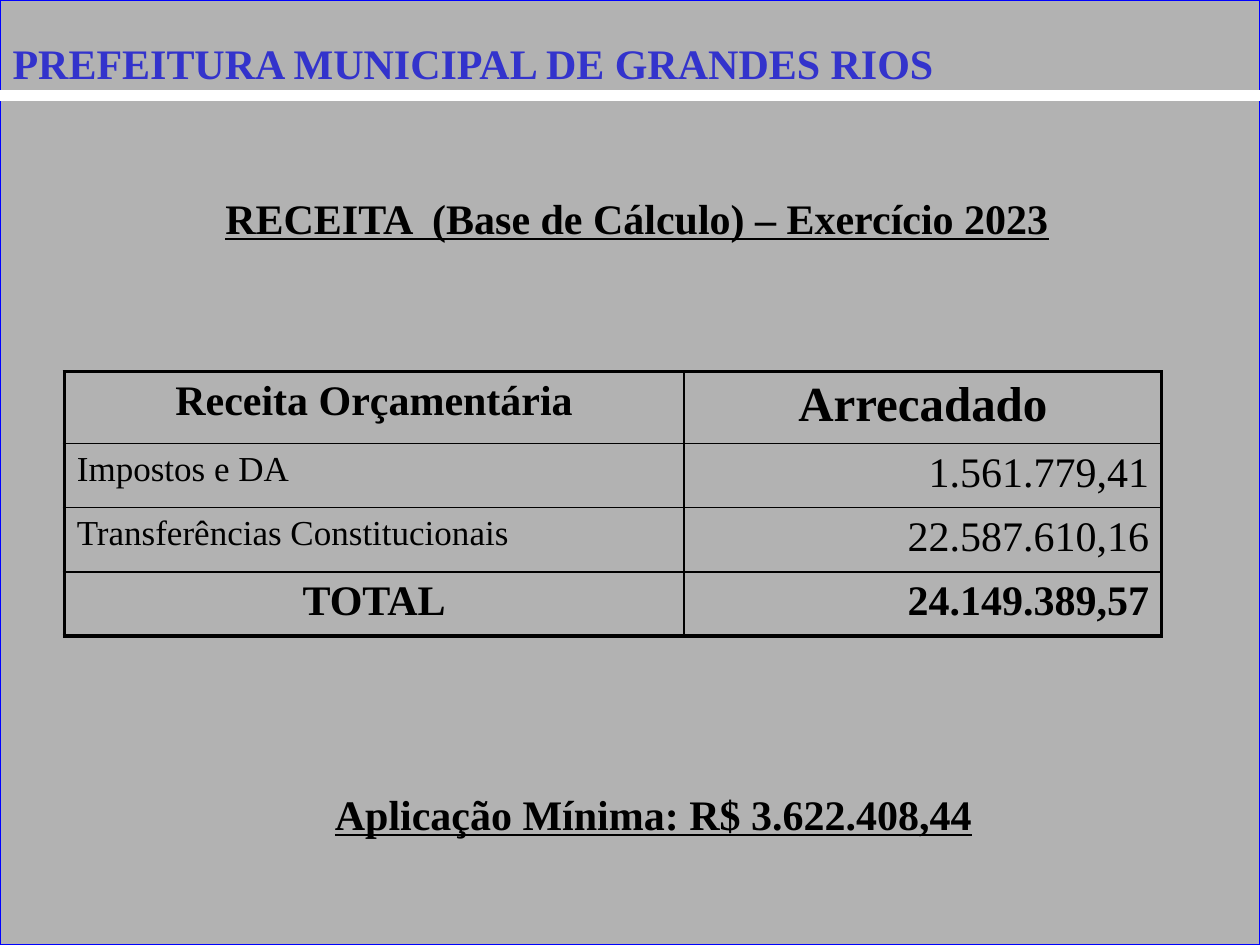
from lxml.etree import SubElement
from pptx import Presentation
from pptx.dml.color import RGBColor
from pptx.enum.shapes import MSO_CONNECTOR, MSO_SHAPE
from pptx.enum.text import MSO_ANCHOR, MSO_AUTO_SIZE, PP_ALIGN
from pptx.oxml import parse_xml
from pptx.oxml.ns import nsdecls, qn
from pptx.util import Inches, Pt

BLACK = RGBColor(0x00, 0x00, 0x00)
WHITE = RGBColor(0xFF, 0xFF, 0xFF)
GRAY = RGBColor(0xB2, 0xB2, 0xB2)
BLUE = RGBColor(0x00, 0x00, 0xFF)
INDIGO = RGBColor(0x33, 0x33, 0xCC)
FONT = "Times New Roman"
THIN, THICK = Pt(1), Pt(2.25)

TEXT_SHADOW = (
    f'<a:effectLst {nsdecls("a")}><a:outerShdw dist="35921" dir="2700000">'
    '<a:srgbClr val="808080"/></a:outerShdw></a:effectLst>'
)

REVENUE = [
    [("Receita Orçamentária", 24, True, PP_ALIGN.CENTER),
     ("Arrecadado", 28, True, PP_ALIGN.CENTER)],
    [("Impostos e DA", 20, False, PP_ALIGN.LEFT),
     ("1.561.779,41", 24, False, PP_ALIGN.RIGHT)],
    [("Transferências Constitucionais", 20, False, PP_ALIGN.LEFT),
     ("22.587.610,16", 24, False, PP_ALIGN.RIGHT)],
    [("TOTAL", 24, True, PP_ALIGN.CENTER),
     ("24.149.389,57", 24, True, PP_ALIGN.RIGHT)],
]


class RevenueSlide:
    def __init__(self, presentation):
        self.slide = presentation.slides.add_slide(presentation.slide_layouts[5])
        self.shapes = self.slide.shapes

    def styled_text(self, frame, text, size=24, bold=True, align=PP_ALIGN.CENTER,
                    color=BLACK, underline=None):
        frame.text = text
        paragraph = frame.paragraphs[0]
        paragraph.alignment = align
        run = paragraph.runs[0]
        run.font.name = FONT
        run.font.size = Pt(size)
        run.font.bold = bold
        run.font.underline = underline
        run.font.color.rgb = color
        return run

    def panel(self, left, top, width, height):
        panel = self.shapes.add_shape(
            MSO_SHAPE.RECTANGLE, Inches(left), Inches(top), Inches(width), Inches(height))
        panel.shadow.inherit = False
        panel.fill.solid()
        panel.fill.fore_color.rgb = GRAY
        panel.line.color.rgb = BLUE
        panel.line.width = Pt(0.75)

    def rule(self, top, width):
        rule = self.shapes.add_connector(
            MSO_CONNECTOR.STRAIGHT, 0, Inches(top), Inches(width), Inches(top))
        rule.line.color.rgb = WHITE
        rule.line.width = Pt(6)
        SubElement(rule._element.spPr, qn("a:effectLst"))

    def title(self, text, left, top, width, height):
        title = self.shapes.title
        title.left, title.top = Inches(left), Inches(top)
        title.width, title.height = Inches(width), Inches(height)
        title.text_frame.auto_size = MSO_AUTO_SIZE.NONE
        title.text_frame.vertical_anchor = MSO_ANCHOR.TOP
        run = self.styled_text(title.text_frame, text, align=PP_ALIGN.LEFT, color=INDIGO)
        fill = run._r.get_or_add_rPr().find(qn("a:solidFill"))
        fill.addnext(parse_xml(TEXT_SHADOW))
        self.shapes._spTree.append(title._element)

    def heading(self, text, left, top, width, height):
        heading = self.shapes.add_textbox(
            Inches(left), Inches(top), Inches(width), Inches(height))
        heading.text_frame.word_wrap = True
        self.styled_text(heading.text_frame, text, underline=True)

    def borders(self, cell, widths):
        properties = cell._tc.get_or_add_tcPr()
        for index, (side, width) in enumerate(widths.items()):
            properties.insert(index, parse_xml(
                f'<a:{side} {nsdecls("a")} w="{int(width)}"><a:solidFill>'
                f'<a:srgbClr val="{BLACK}"/></a:solidFill></a:{side}>'))

    def table(self, rows, left, top, column_widths, row_heights):
        table = self.shapes.add_table(
            len(rows), len(column_widths), Inches(left), Inches(top),
            Inches(sum(column_widths)), Inches(sum(row_heights))).table
        table.first_row = table.horz_banding = False
        for column, width in zip(table.columns, column_widths):
            column.width = Inches(width)
        for row, height in zip(table.rows, row_heights):
            row.height = Inches(height)
        last_row, last_column = len(rows) - 1, len(column_widths) - 1
        for r, row in enumerate(rows):
            for c, (text, size, bold, align) in enumerate(row):
                cell = table.cell(r, c)
                cell.fill.background()
                self.styled_text(cell.text_frame, text, size, bold, align)
                self.borders(cell, {
                    "lnL": THICK if c == 0 else THIN,
                    "lnR": THICK if c == last_column else THIN,
                    "lnT": THICK if r == 0 else THIN,
                    "lnB": THICK if r == last_row else THIN,
                })


def main():
    presentation = Presentation()
    presentation.slide_width, presentation.slide_height = Inches(10), Inches(7.5)
    revenue = RevenueSlide(presentation)
    revenue.panel(0, 0, 10, 7.5)
    revenue.rule(0.76, 10)
    revenue.heading("RECEITA  (Base de Cálculo) – Exercício 2023", 0.98, 1.48, 8.15, 0.5)
    revenue.table(REVENUE, 0.51, 2.95, [4.92, 3.79], [0.57, 0.51, 0.51, 0.51])
    revenue.title("PREFEITURA MUNICIPAL DE GRANDES RIOS", 0, 0.25, 8.23, 0.5)
    revenue.heading("Aplicação Mínima: R$ 3.622.408,44", 2.43, 6.21, 5.51, 0.5)
    presentation.save("out.pptx")


if __name__ == "__main__":
    main()
